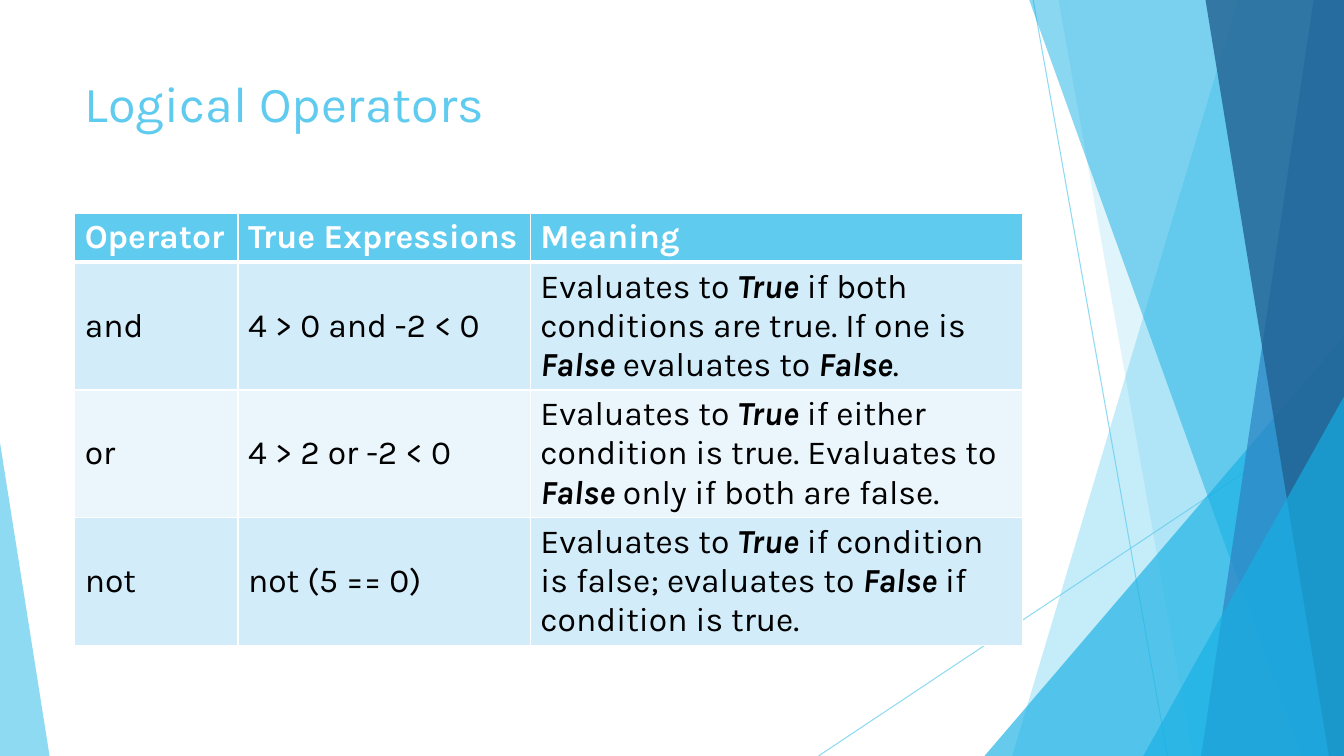
from pptx import Presentation
from pptx.dml.color import RGBColor
from pptx.enum.shapes import MSO_CONNECTOR as Connector, MSO_SHAPE as Preset
from pptx.enum.text import MSO_ANCHOR as Anchor, PP_ALIGN as Align
from pptx.oxml import parse_xml
from pptx.oxml.ns import nsdecls
from pptx.util import Inches, Pt

COLUMNS, ROWS = 160, 90
SKY, CYAN, BLUE, NAVY = "5FCBEF", "17B0E4", "2E83C3", "226292"
WHITE, BLACK = "FFFFFF", "000000"
BANDS = ["D2ECF9", "EAF6FC"]

HEADINGS = ["Operator", "True Expressions", "Meaning"]
OPERATORS = [
    ["and", "4 > 0 and -2 < 0",
     "Evaluates to *True* if both conditions are true. If one is *False* evaluates to *False*."],
    ["or", "4 > 2 or -2 < 0",
     "Evaluates to *True* if either condition is true. Evaluates to *False* only if both are false."],
    ["not", "not (5 == 0)",
     "Evaluates to *True* if condition is false; evaluates to *False* if condition is true."],
]


def colour(hex_code):
    return RGBColor.from_string(hex_code)


def grid(units):
    return Inches(units / 12)


class FacetSlide:
    font = "Karla"

    def __init__(self, deck):
        self.slide = deck.slides.add_slide(deck.slide_layouts[5])
        self.shapes = self.slide.shapes

    def style_run(self, run, size, hex_code, bold=False, italic=False):
        run.font.name = self.font
        run.font.size = Pt(size)
        run.font.color.rgb = colour(hex_code)
        run.font.bold = bold
        run.font.italic = italic

    def fade(self, shape, opacity):
        tint = shape.element.spPr.xpath(".//a:srgbClr")[0]
        tint.append(parse_xml(f'<a:alpha {nsdecls("a")} val="{opacity * 1000}"/>'))

    def paint(self, shape, hex_code, opacity):
        shape.shadow.inherit = False
        shape.fill.solid()
        shape.fill.fore_color.rgb = colour(hex_code)
        shape.line.fill.background()
        self.fade(shape, opacity)

    def title(self, wording, left, top, width, height):
        heading = self.shapes.title
        heading.left, heading.top = grid(left), grid(top)
        heading.width, heading.height = grid(width), grid(height)
        frame = heading.text_frame
        frame.text = wording
        frame.word_wrap = True
        frame.vertical_anchor = Anchor.TOP
        frame.paragraphs[0].alignment = Align.LEFT
        self.style_run(frame.paragraphs[0].runs[0], 36, SKY)

    def ray(self, *ends):
        ray = self.shapes.add_connector(Connector.STRAIGHT, *map(grid, ends))
        ray.line.color.rgb = colour(SKY)
        ray.line.width = Pt(0.75)
        self.fade(ray, 70)
        ray.element.spPr.append(parse_xml(f'<a:effectLst {nsdecls("a")}/>'))

    def slice(self, top_edge, bottom_edge, hex_code, opacity):
        top = grid(-0.1)
        outline = self.shapes.build_freeform(grid(top_edge), top)
        outline.add_line_segments([
            (grid(COLUMNS), top), (grid(COLUMNS), grid(ROWS)), (grid(bottom_edge), grid(ROWS)),
        ])
        self.paint(outline.convert_to_shape(), hex_code, opacity)

    def wedge(self, left, top, width, apex, hex_code, opacity):
        wedge = self.shapes.add_shape(
            Preset.ISOSCELES_TRIANGLE, grid(left), grid(top), grid(width), grid(ROWS - top))
        wedge.adjustments[0] = apex
        self.paint(wedge, hex_code, opacity)

    def cell(self, cell, wording, fill, ink, top_rule, bottom_rule, bold=False):
        properties = cell._tc.get_or_add_tcPr()
        for side, points in zip("LRTB", [1, 1, top_rule, bottom_rule]):
            properties.append(parse_xml(
                f'<a:ln{side} {nsdecls("a")} w="{Pt(points)}"><a:solidFill>'
                f'<a:srgbClr val="{WHITE}"/></a:solidFill></a:ln{side}>'))
        cell.fill.solid()
        cell.fill.fore_color.rgb = colour(fill)
        cell.vertical_anchor = Anchor.TOP if bold else Anchor.MIDDLE
        paragraph = cell.text_frame.paragraphs[0]
        for index, piece in enumerate(wording.split("*")):
            run = paragraph.add_run()
            run.text = piece
            emphasis = index % 2 == 1
            self.style_run(run, 24, ink, bold or emphasis, emphasis)

    def table(self, headings, records, left, top, widths, heights):
        table = self.shapes.add_table(
            len(heights), len(widths), grid(left), grid(top),
            grid(sum(widths)), grid(sum(heights))).table
        table.horz_banding = False
        for column, width in zip(table.columns, widths):
            column.width = grid(width)
        for row, height in zip(table.rows, heights):
            row.height = grid(height)
        for index, heading in enumerate(headings):
            self.cell(table.cell(0, index), heading, SKY, WHITE, 1, 3, bold=True)
        for number, record in enumerate(records, 1):
            band = BANDS[(number - 1) % 2]
            for index, wording in enumerate(record):
                self.cell(table.cell(number, index), wording, band, BLACK,
                          3 if number == 1 else 1, 1)


def main():
    deck = Presentation()
    deck.slide_width, deck.slide_height = grid(COLUMNS), grid(ROWS)
    page = FacetSlide(deck)

    page.ray(123, 0, 139, ROWS)
    page.ray(COLUMNS, 48.36, 97.44, ROWS)
    page.slice(147.4, 120.5, SKY, 36)
    page.slice(126, 142, SKY, 20)
    page.wedge(117.2, 40, 42.8, 1, CYAN, 66)
    page.slice(122.5, 154.9, CYAN, 50)
    page.slice(156.4, 143, BLUE, 70)
    page.slice(143.5, 158.2, NAVY, 80)
    page.wedge(136.1, 47.2, 23.9, 1, CYAN, 66)
    page.wedge(0, 52.7, 5.9, 0, SKY, 70)

    page.title("Logical Operators", 8.9, 8, 112.8, 17.3)
    page.table(HEADINGS, OPERATORS, 8.9, 25.36,
               [19.44, 34.8, 58.56], [5.8] + [15.18] * len(OPERATORS))
    deck.save("out.pptx")


if __name__ == "__main__":
    main()
